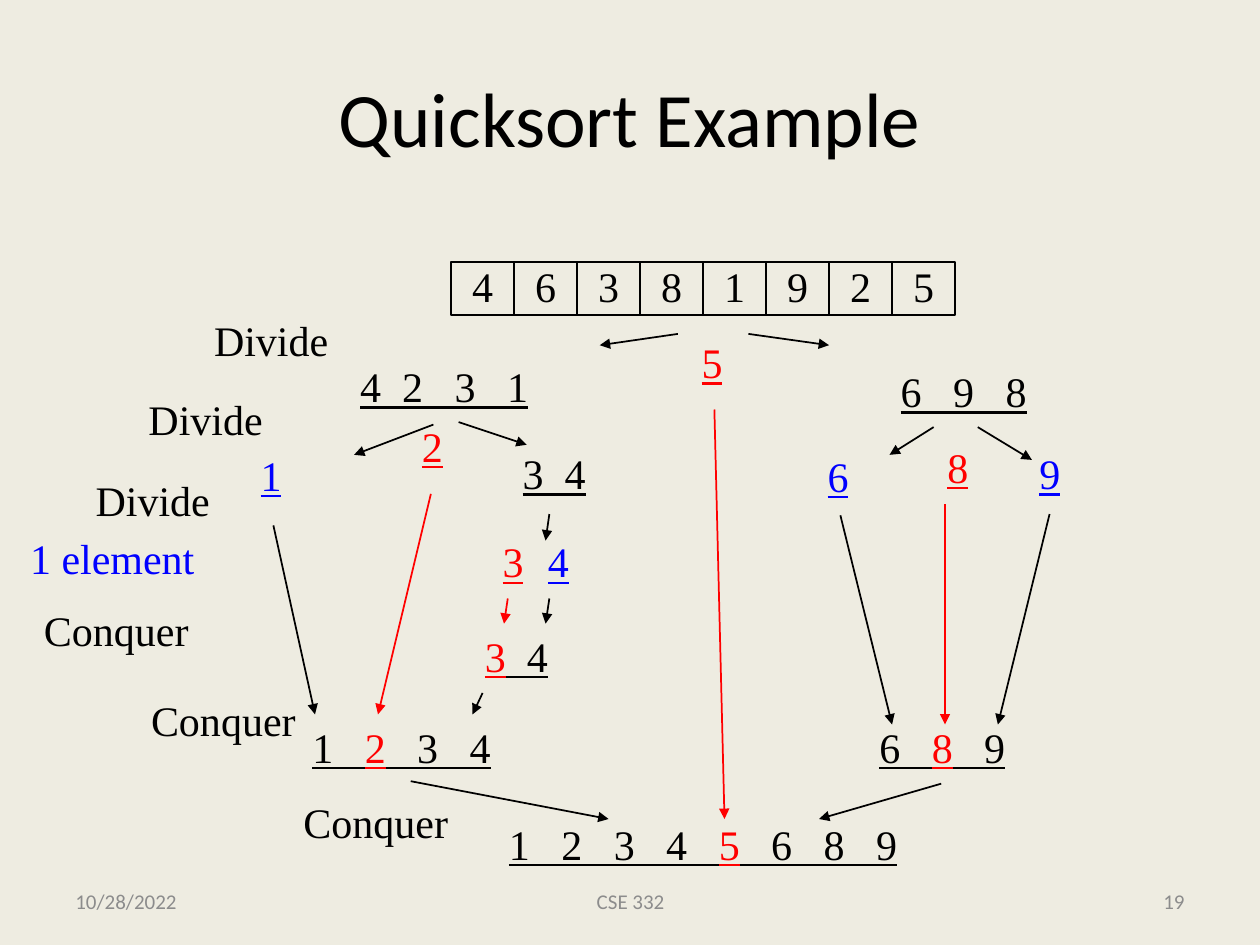
"""Build the Quicksort Example slide: divide and conquer on eight numbers."""
from lxml import etree
from pptx import Presentation
from pptx.dml.color import RGBColor
from pptx.enum.shapes import MSO_CONNECTOR, MSO_SHAPE
from pptx.enum.text import MSO_ANCHOR, MSO_AUTO_SIZE, PP_ALIGN
from pptx.oxml.ns import qn
from pptx.util import Inches, Pt

LEFT, CENTER, RIGHT = PP_ALIGN.LEFT, PP_ALIGN.CENTER, PP_ALIGN.RIGHT
MIDDLE = MSO_ANCHOR.MIDDLE
BLACK, RED, BLUE, GRAY = "000000", "FF0000", "0000FF", "8C8C8C"
SERIF, SANS = "Times New Roman", "Calibri"


def rgb(color):
    """Turn a hex string into a colour."""
    return RGBColor.from_string(color)


def write(tf, runs, size=24, font=SERIF, align=LEFT, underline=False, spacing=0.9):
    """Write coloured runs as the one paragraph of a text frame."""
    p = tf.paragraphs[0]
    p.alignment, p.line_spacing = align, spacing
    p.font.size, p.font.name = Pt(size), font
    for text, color in runs:
        r = p.add_run()
        r.text = text
        r.font.color.rgb = rgb(color)
        if underline:
            r.font.underline = True


prs = Presentation()
prs.slide_width, prs.slide_height = Inches(10), Inches(7.5)
s = prs.slides.add_slide(prs.slide_layouts[5])
s.background.fill.solid()
s.background.fill.fore_color.rgb = rgb("EEECE1")

title = s.shapes.title
title.left, title.top = Inches(0.5), Inches(0.3)
title.width, title.height = Inches(9), Inches(1.25)
title.text_frame.vertical_anchor = MIDDLE
write(title.text_frame, [("Quicksort Example", BLACK)], 44, SANS, CENTER, spacing=1.0)

for i, digit in enumerate("46381925"):
    sp = s.shapes.add_shape(MSO_SHAPE.RECTANGLE, Inches(3.58 + 0.5 * i), Inches(2.08),
                            Inches(0.5), Inches(0.42))
    sp.shadow.inherit = False
    sp.fill.background()
    sp.line.color.rgb = rgb(BLACK)
    sp.line.width = Pt(0.75)
    sp.text_frame.word_wrap = False
    sp.text_frame.vertical_anchor = MIDDLE
    write(sp.text_frame, [(digit, BLACK)], align=CENTER)

steps = [
    (1.6, 2.49, 1.11, "Divide", BLACK),
    (1.08, 3.12, 1.11, "Divide", BLACK),
    (0.66, 3.76, 1.11, "Divide", BLACK),
    (0.14, 4.22, 1.55, "1 element", BLUE),
    (0.25, 4.79, 1.35, "Conquer", BLACK),
    (1.1, 5.51, 1.35, "Conquer", BLACK),
    (2.31, 6.32, 1.35, "Conquer", BLACK),
]
lists = [
    (2.76, 2.86, 1.55, [("4  2   3   1", BLACK)]),
    (7.05, 2.9, 1.22, [("6   9   8", BLACK)]),
    (5.47, 2.67, 0.37, [("5", RED)]),
    (3.25, 3.33, 0.37, [("2", RED)]),
    (7.42, 3.5, 0.37, [("8", RED)]),
    (1.97, 3.56, 0.37, [("1", BLUE)]),
    (4.05, 3.55, 0.72, [("3  4", BLACK)]),
    (6.47, 3.57, 0.37, [("6", BLUE)]),
    (8.15, 3.55, 0.37, [("9", BLUE)]),
    (3.89, 4.25, 0.37, [("3", RED)]),
    (4.25, 4.25, 0.37, [("4", BLUE)]),
    (3.75, 5, 0.72, [("3", RED), ("  4", BLACK)]),
    (2.38, 5.72, 1.65, [("1   ", BLACK), ("2", RED), ("   3   4", BLACK)]),
    (6.88, 5.72, 1.22, [("6   ", BLACK), ("8", RED), ("   9", BLACK)]),
    (3.94, 6.49, 3.3, [("1   2   3   4   ", BLACK), ("5", RED), ("   6   8   9", BLACK)]),
]
labels = [(x, y, w, [(text, color)], False) for x, y, w, text, color in steps]
labels += [(*item, True) for item in lists]
for x, y, w, runs, underline in labels:
    tf = s.shapes.add_textbox(Inches(x), Inches(y), Inches(w), Inches(0.5)).text_frame
    tf.word_wrap = False
    tf.auto_size = MSO_AUTO_SIZE.SHAPE_TO_FIT_TEXT
    write(tf, runs, underline=underline)

arrows = [
    (5.38, 2.65, 4.76, 2.74, BLACK),
    (5.94, 2.65, 6.58, 2.74, BLACK),
    (3.44, 3.37, 2.81, 3.61, BLACK),
    (3.64, 3.35, 4.18, 3.53, BLACK),
    (7.41, 3.39, 7.06, 3.61, BLACK),
    (7.76, 3.39, 8.19, 3.65, BLACK),
    (6.67, 4.09, 7.08, 5.75, BLACK),
    (8.33, 4.08, 7.92, 5.75, BLACK),
    (2.17, 4.17, 2.5, 5.67, BLACK),
    (3.83, 5.5, 3.75, 5.67, BLACK),
    (3.26, 6.2, 4.83, 6.5, BLACK),
    (7.47, 6.22, 6.5, 6.5, BLACK),
    (4.36, 4.08, 4.33, 4.29, BLACK),
    (4.36, 4.75, 4.33, 4.95, BLACK),
    (4.03, 4.75, 4, 4.95, RED),
    (3.42, 3.92, 3, 5.67, RED),
    (5.67, 3.25, 5.75, 6.5, RED),
    (7.5, 4, 7.5, 5.75, RED),
]
for *ends, color in arrows:
    line = s.shapes.add_connector(MSO_CONNECTOR.STRAIGHT, *map(Inches, ends))
    line.line.color.rgb = rgb(color)
    line.line.width = Pt(1)
    etree.SubElement(line.line._get_or_add_ln(), qn("a:tailEnd"), type="triangle")
    etree.SubElement(line._element.spPr, qn("a:effectLst"))

footers = [
    (0.5, 2.33, "10/28/2022", LEFT),
    (3.42, 3.17, "CSE 332", CENTER),
    (7.17, 2.33, "19", RIGHT),
]
for x, w, text, align in footers:
    tf = s.shapes.add_textbox(Inches(x), Inches(6.95), Inches(w), Inches(0.4)).text_frame
    tf.word_wrap = True
    tf.vertical_anchor = MIDDLE
    write(tf, [(text, GRAY)], 12, SANS, align, spacing=1.0)

prs.save("out.pptx")
